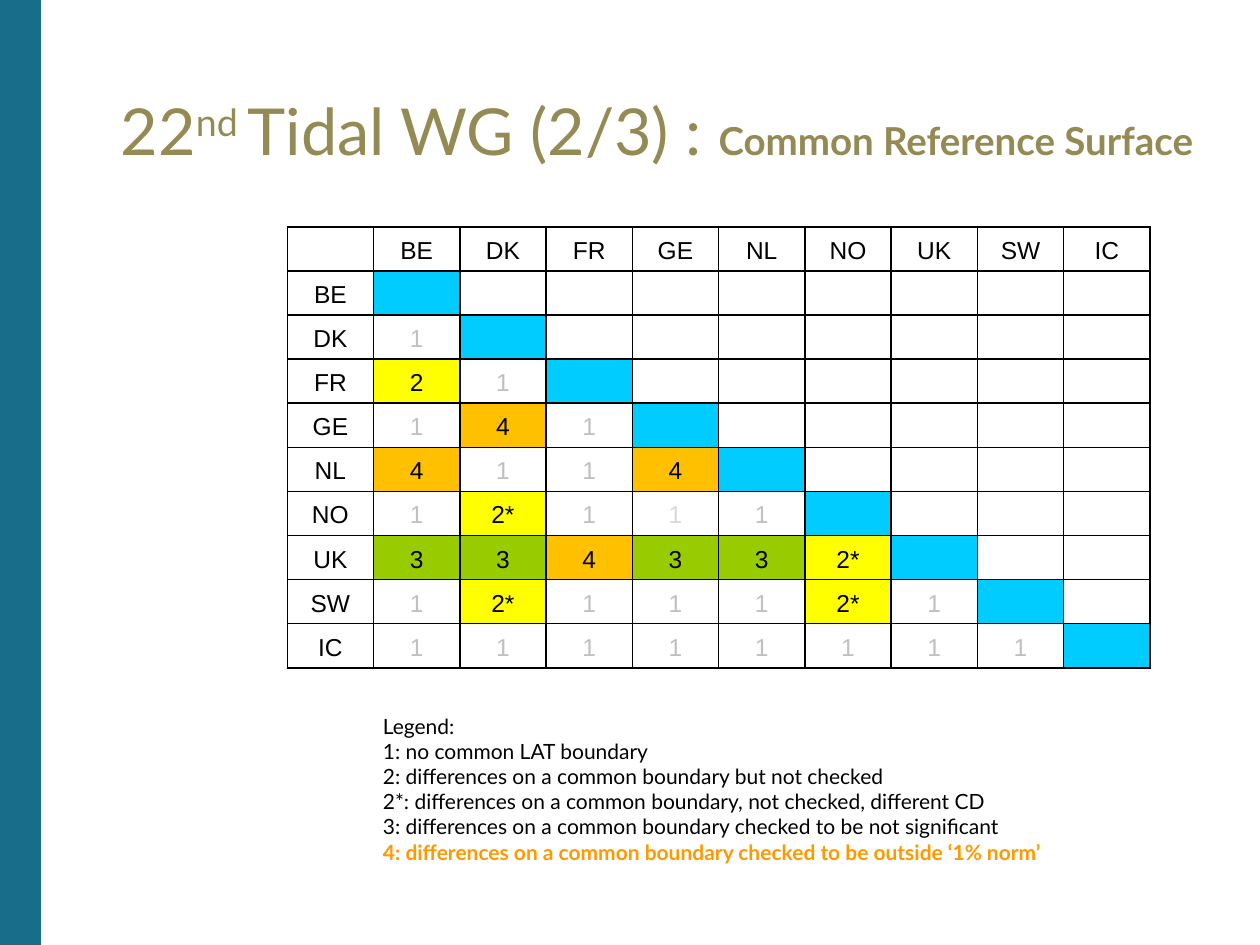
from dataclasses import dataclass
from typing import Optional

from lxml.etree import SubElement
from pptx import Presentation
from pptx.dml.color import RGBColor
from pptx.enum.shapes import MSO_SHAPE
from pptx.enum.text import MSO_ANCHOR, PP_ALIGN
from pptx.oxml.ns import qn
from pptx.util import Inches, Pt


@dataclass(frozen=True)
class Theme:
    band: str = "176D8A"
    title: str = "948A54"
    ink: str = "000000"
    muted: str = "C0C0C0"
    faint: str = "D9D9D9"
    alert: str = "FF9900"
    same: str = "00CCFF"
    yellow: str = "FFFF00"
    green: str = "99CC00"
    amber: str = "FFC000"
    sans: str = "Lato"
    grid: str = "Arial"
    head: int = 37
    sub: int = 22
    cell: int = 14
    note: int = 12


THEME = Theme()
FILLS = {"2": THEME.yellow, "2*": THEME.yellow, "3": THEME.green, "4": THEME.amber}
LANDS = ["BE", "DK", "FR", "GE", "NL", "NO", "UK", "SW", "IC"]
LEVELS = [
    "",
    "1",
    "2 1",
    "1 4 1",
    "4 1 1 4",
    "1 2* 1 1 1",
    "3 3 4 3 3 2*",
    "1 2* 1 1 1 2* 1",
    "1 1 1 1 1 1 1 1",
]
FAINT = ("NO", "GE")


@dataclass(frozen=True)
class Span:
    text: str
    size: int
    color: str
    font: str = THEME.sans
    bold: bool = False
    raised: bool = False


@dataclass(frozen=True)
class Cell:
    text: str = ""
    color: str = THEME.ink
    fill: Optional[str] = None


def add_span(para, span: Span) -> None:
    run = para.add_run()
    run.text = span.text
    font = run.font
    font.name = span.font
    font.size = Pt(span.size)
    font.bold = span.bold
    font.color.rgb = RGBColor.from_string(span.color)
    if span.raised:
        run._r.get_or_add_rPr().set("baseline", "30000")


def add_box(slide, left: float, top: float, width: float, height: float):
    box = slide.shapes.add_textbox(Inches(left), Inches(top), Inches(width), Inches(height))
    box.text_frame.word_wrap = True
    return box.text_frame


def add_band(slide) -> None:
    band = slide.shapes.add_shape(MSO_SHAPE.RECTANGLE, 0, 0, Inches(0.32), Inches(7.5))
    band.shadow.inherit = False
    band.fill.solid()
    band.fill.fore_color.rgb = RGBColor.from_string(THEME.band)
    band.line.color.rgb = RGBColor.from_string(THEME.band)
    band.line.width = Pt(1)


def add_title(slide) -> None:
    frame = add_box(slide, 0.96, 0.81, 8.94, 0.75)
    frame.margin_left = frame.margin_right = frame.margin_top = frame.margin_bottom = 0
    para = frame.paragraphs[0]
    para.line_spacing = Pt(38)
    for span in (
        Span("22", THEME.head, THEME.title),
        Span("nd ", THEME.head, THEME.title, raised=True),
        Span("Tidal WG (2/3) : ", THEME.head, THEME.title),
        Span("Common Reference Surface", THEME.sub, THEME.title, bold=True),
    ):
        add_span(para, span)


def add_edges(cell) -> None:
    props = cell._tc.get_or_add_tcPr()
    for side in ("L", "R", "T", "B"):
        line = SubElement(props, qn(f"a:ln{side}"), w=str(Pt(1)))
        fill = SubElement(line, qn("a:solidFill"))
        SubElement(fill, qn("a:srgbClr"), val=THEME.ink)


def plan_cell(row: int, col: int) -> Cell:
    if row == 0 or col == 0:
        return Cell(LANDS[row + col - 1] if row + col else "")
    if row == col:
        return Cell(fill=THEME.same)
    if col > row:
        return Cell()
    level = LEVELS[row - 1].split()[col - 1]
    if level != "1":
        return Cell(level, fill=FILLS[level])
    pair = (LANDS[row - 1], LANDS[col - 1])
    return Cell(level, THEME.faint if pair == FAINT else THEME.muted)


def draw_cell(cell, plan: Cell) -> None:
    add_edges(cell)
    cell.vertical_anchor = MSO_ANCHOR.BOTTOM
    if plan.fill:
        cell.fill.solid()
        cell.fill.fore_color.rgb = RGBColor.from_string(plan.fill)
    else:
        cell.fill.background()
    if not plan.text:
        cell.margin_top = cell.margin_bottom = 0
        return
    para = cell.text_frame.paragraphs[0]
    para.alignment = PP_ALIGN.CENTER
    para.line_spacing = 1.07
    add_span(para, Span(plan.text, THEME.cell, plan.color, THEME.grid))


def add_matrix(slide) -> None:
    count = len(LANDS) + 1
    table = slide.shapes.add_table(
        count, count, Inches(2.28), Inches(1.8), Inches(6.85), Inches(3.5)
    ).table
    table.first_row = table.horz_banding = False
    for row in range(count):
        for col in range(count):
            draw_cell(table.cell(row, col), plan_cell(row, col))


def add_legend(slide) -> None:
    frame = add_box(slide, 2.94, 5.3, 6.18, 1.92)
    frame.vertical_anchor = MSO_ANCHOR.MIDDLE
    lines = [
        "Legend:",
        "1: no common LAT boundary",
        "2: differences on a common boundary but not checked",
        "2*: differences on a common boundary, not checked, different CD",
        "3: differences on a common boundary checked to be not significant",
        "4: differences on a common boundary checked to be outside ‘1% norm’",
    ]
    for i, text in enumerate(lines):
        para = frame.add_paragraph() if i else frame.paragraphs[0]
        last = i == len(lines) - 1
        color = THEME.alert if last else THEME.ink
        add_span(para, Span(text, THEME.note, color, bold=last))


def main() -> None:
    deck = Presentation()
    deck.slide_width = Inches(10)
    deck.slide_height = Inches(7.5)
    slide = deck.slides.add_slide(deck.slide_layouts[6])
    add_band(slide)
    add_title(slide)
    add_matrix(slide)
    add_legend(slide)
    deck.save("out.pptx")


if __name__ == "__main__":
    main()
